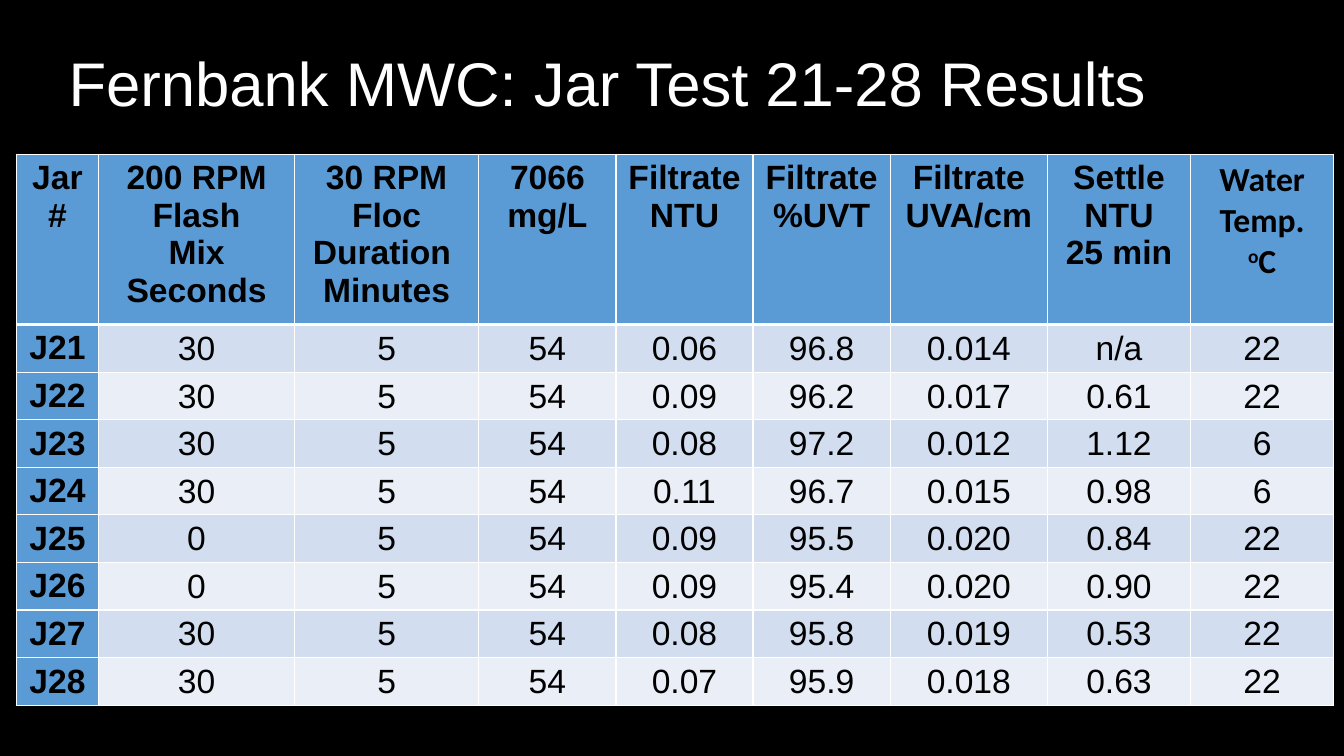
from dataclasses import dataclass

from lxml import etree
from pptx import Presentation
from pptx.dml.color import RGBColor
from pptx.enum import text as t
from pptx.oxml import ns
from pptx.util import Inches, Pt


@dataclass(frozen=True)
class Theme:
    back: str = "000000"
    light: str = "FFFFFF"
    ink: str = "000000"
    head: str = "5B9BD5"
    bands: tuple = ("D2DEEF", "EAEFF7")
    font: str = "Arial"
    alt: str = "Calibri"
    title: int = 44
    body: int = 24
    thin: int = 1
    thick: int = 3


THEME = Theme()
WIDTHS = [0.82, 1.94, 1.83, 1.36, 1.36, 1.36, 1.56, 1.42, 1.42]
HEAD_HIGH, ROW_HIGH = 1.69, 0.47
HEADS = ["Jar\n#", "200 RPM\nFlash\nMix\nSeconds",
         "30 RPM\nFloc\nDuration \nMinutes", "7066\nmg/L", "Filtrate\nNTU",
         "Filtrate\n%UVT", "Filtrate\nUVA/cm", "Settle\nNTU\n25 min",
         "Water\nTemp.\n"]
JARS = [
    ["J21", "30", "5", "54", "0.06", "96.8", "0.014", "n/a", "22"],
    ["J22", "30", "5", "54", "0.09", "96.2", "0.017", "0.61", "22"],
    ["J23", "30", "5", "54", "0.08", "97.2", "0.012", "1.12", "6"],
    ["J24", "30", "5", "54", "0.11", "96.7", "0.015", "0.98", "6"],
    ["J25", "0", "5", "54", "0.09", "95.5", "0.020", "0.84", "22"],
    ["J26", "0", "5", "54", "0.09", "95.4", "0.020", "0.90", "22"],
    ["J27", "30", "5", "54", "0.08", "95.8", "0.019", "0.53", "22"],
    ["J28", "30", "5", "54", "0.07", "95.9", "0.018", "0.63", "22"],
]


def color(code):
    return RGBColor.from_string(code)


def style(run, size, code, face, bold=False):
    font = run.font
    font.size, font.name, font.bold = Pt(size), face, bold
    font.color.rgb = color(code)


def edge(cell, top, bottom):
    """Draw the cell's four borders, ahead of its fill as the schema asks."""
    props = cell._tc.get_or_add_tcPr()
    sides = {"L": THEME.thin, "R": THEME.thin, "T": top, "B": bottom}
    for spot, (side, width) in enumerate(sides.items()):
        line = etree.Element(ns.qn("a:ln" + side), w=str(Pt(width)))
        fill = etree.SubElement(line, ns.qn("a:solidFill"))
        etree.SubElement(fill, ns.qn("a:srgbClr"), val=THEME.light)
        props.insert(spot, line)


def add_title(slide, words, left, top, width, height):
    title = slide.shapes.title
    title.left, title.top = Inches(left), Inches(top)
    title.width, title.height = Inches(width), Inches(height)
    frame = title.text_frame
    frame.text = words
    frame.vertical_anchor = t.MSO_ANCHOR.MIDDLE
    para = frame.paragraphs[0]
    para.alignment, para.line_spacing = t.PP_ALIGN.LEFT, 0.9
    style(para.runs[0], THEME.title, THEME.light, THEME.font)


def fill_cell(cell, words, row, col):
    is_head = row == 0
    is_key = is_head or col == 0
    cell.fill.solid()
    cell.fill.fore_color.rgb = color(
        THEME.head if is_key else THEME.bands[(row - 1) % 2])
    edge(cell, THEME.thick if row == 1 else THEME.thin,
         THEME.thick if is_head else THEME.thin)
    if not is_key:
        cell.vertical_anchor = t.MSO_ANCHOR.MIDDLE
        cell.margin_left = cell.margin_right = cell.margin_top = Inches(0.01)
        cell.margin_bottom = 0
    cell.text_frame.text = words
    is_temp = is_head and col == len(HEADS) - 1
    if is_temp:
        unit = cell.text_frame.paragraphs[-1]
        for mark in "oC":
            unit.add_run().text = mark
        unit.runs[0].font._element.set("baseline", "30000")
    for para in cell.text_frame.paragraphs:
        para.alignment = t.PP_ALIGN.CENTER
        for run in para.runs:
            style(run, THEME.body, THEME.ink,
                  THEME.alt if is_temp else THEME.font, is_key)


def add_results(slide, left, top):
    rows = [HEADS] + JARS
    highs = [HEAD_HIGH] + [ROW_HIGH] * len(JARS)
    table = slide.shapes.add_table(
        len(rows), len(WIDTHS), Inches(left), Inches(top),
        Inches(sum(WIDTHS)), Inches(sum(highs))).table
    for col, width in zip(table.columns, WIDTHS):
        col.width = Inches(width)
    for row, high in zip(table.rows, highs):
        row.height = Inches(high)
    for r, row in enumerate(rows):
        for c, words in enumerate(row):
            fill_cell(table.cell(r, c), words, r, c)


def main():
    deck = Presentation()
    deck.slide_width, deck.slide_height = Inches(13.33), Inches(7.5)
    slide = deck.slides.add_slide(deck.slide_layouts[5])
    slide.background.fill.solid()
    slide.background.fill.fore_color.rgb = color(THEME.back)
    add_title(slide, "Fernbank MWC: Jar Test 21-28 Results",
              0.58, 0.13, 11.84, 1.45)
    add_results(slide, 0.16, 1.53)
    deck.save("out.pptx")


if __name__ == "__main__":
    main()
